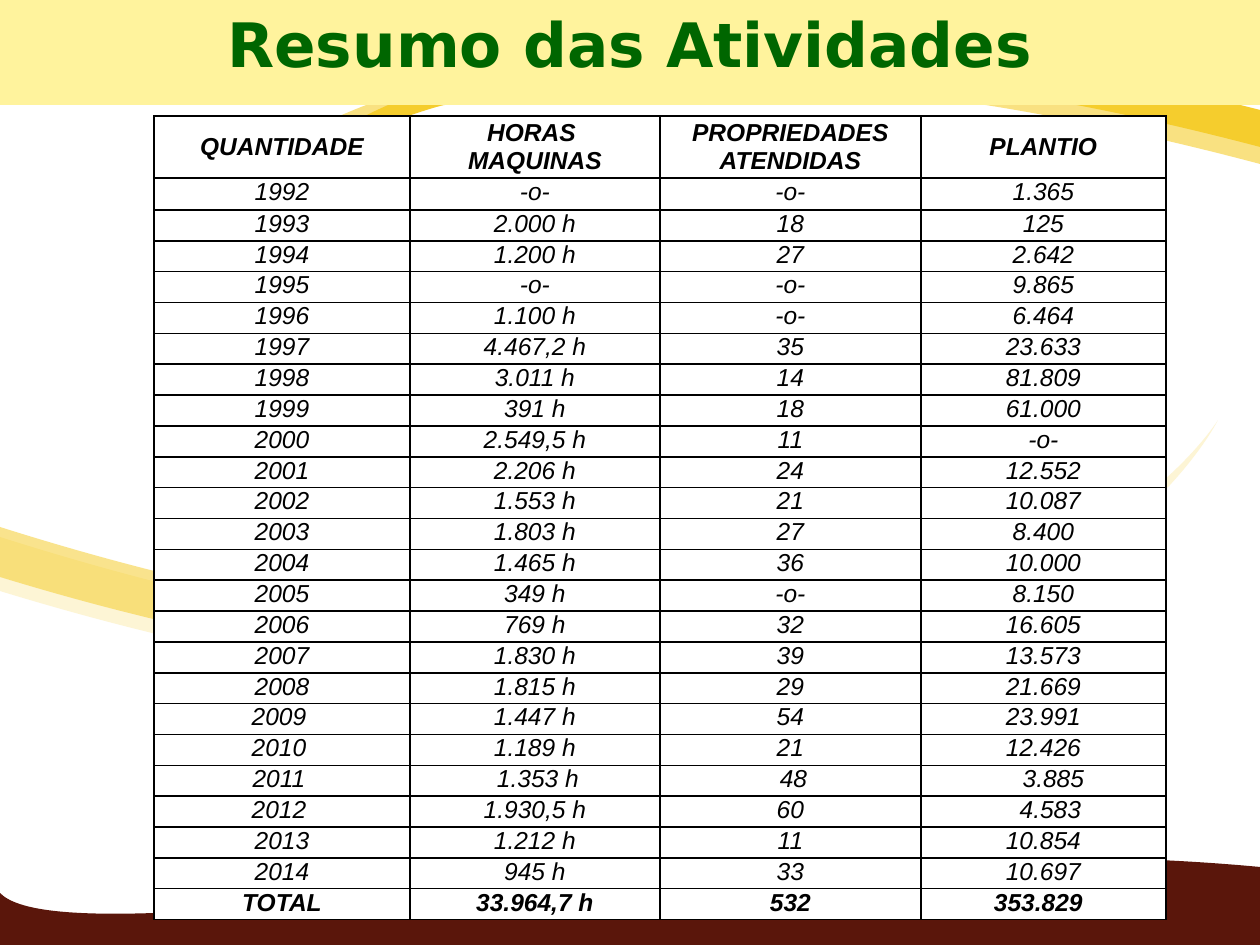
from lxml.etree import SubElement
from pptx import Presentation
from pptx.dml.color import RGBColor
from pptx.enum.shapes import MSO_SHAPE
from pptx.enum.text import MSO_ANCHOR, PP_ALIGN
from pptx.oxml import parse_xml
from pptx.oxml.ns import nsdecls, qn
from pptx.util import Emu, Pt

SCALE = 914400 / 126
BLACK = RGBColor(0x00, 0x00, 0x00)
WHITE = RGBColor(0xFF, 0xFF, 0xFF)
MAROON = RGBColor(0x5A, 0x16, 0x0B)
CREAM = RGBColor(0xFD, 0xF5, 0xD5)
PALE_GOLD = RGBColor(0xF9, 0xE1, 0x81)
GOLD = RGBColor(0xF5, 0xCD, 0x2D)
YELLOW = RGBColor(0xFF, 0xF3, 0x9D)
GREEN = RGBColor(0x00, 0x66, 0x00)

WAVES = [
    (MAROON, 100, (0, 893), [
        ((71, 966), (751, 819), (1260, 867)),
        ((1260, 893), (1261, 922), (1261, 950))], [(0, 946), (0, 893)]),
    (CREAM, 100, (0, 537), [
        ((961, 842), (1218, 420), (1218, 420)),
        ((1218, 420), (985, 892), (0, 591)),
        ((0, 591), (0, 583), (0, 537))], []),
    (PALE_GOLD, 100, (1260, 164), [
        ((389, -67), (158, 252), (158, 252)),
        ((158, 252), (368, -105), (1260, 122)),
        ((1260, 122), (1260, 129), (1260, 164))], []),
    (GOLD, 100, (1260, 147), [
        ((440, -69), (221, 231), (221, 231)),
        ((221, 231), (420, -105), (1260, 110)),
        ((1260, 110), (1260, 115), (1260, 147))], []),
    (GOLD, 54, (0, 527), [
        ((907, 814), (1148, 416), (1148, 416)),
        ((1148, 416), (929, 861), (0, 577)),
        ((0, 577), (0, 571), (0, 527))], []),
]

TITLE = "Resumo das Atividades"
HEADER = ("QUANTIDADE", "HORAS \nMAQUINAS", "PROPRIEDADES ATENDIDAS", "PLANTIO")
YEARS = [
    ("1992", "-o-", "-o-", "1.365"),
    ("1993", "2.000 h", "18", "125"),
    ("1994", "1.200 h", "27", "2.642"),
    ("1995", "-o-", "-o-", "9.865"),
    ("1996", "1.100 h", "-o-", "6.464"),
    ("1997", "4.467,2 h", "35", "23.633"),
    ("1998", "3.011 h", "14", "81.809"),
    ("1999", "391 h", "18", "61.000"),
    ("2000", "2.549,5 h", "11", "-o-"),
    ("2001", "2.206 h", "24", "12.552"),
    ("2002", "1.553 h", "21", "10.087"),
    ("2003", "1.803 h", "27", "8.400"),
    ("2004", "1.465 h", "36", "10.000"),
    ("2005", "349 h", "-o-", "8.150"),
    ("2006", "769 h", "32", "16.605"),
    ("2007", "1.830 h", "39", "13.573"),
    ("2008", "1.815 h", "29", "21.669"),
    ("2009", "1.447 h", "54", "23.991"),
    ("2010", "1.189 h", "21", "12.426"),
    ("2011", "1.353 h", "48", "3.885"),
    ("2012", "1.930,5 h", "60", "4.583"),
    ("2013", "1.212 h", "11", "10.854"),
    ("2014", "945 h", "33", "10.697"),
]
TOTAL = ("TOTAL", "33.964,7 h", "532", "353.829")
SHIFTS = {
    ("2009", 0): -3, ("2010", 0): -3, ("2011", 0): -3, ("2012", 0): -3,
    ("2011", 1): 3, ("2011", 2): 3, ("2011", 3): 10, ("2012", 3): 7,
    ("TOTAL", 3): -5,
}
TABLE_LEFT, TABLE_TOP = 154, 116
COL_WIDTHS = (256, 250, 261, 245)
HEADER_HEIGHT, FIRST_HEIGHT, REST_HEIGHT = 62, 32, 710
CELL_INSET = 5
TITLE_FONT = {"name": "DejaVu Sans", "size": Pt(35), "bold": True}
CELL_FONT = {"name": "Arial", "size": Pt(14), "italic": True}


def px(n):
    return Emu(round(n * SCALE))


def set_all(obj, values):
    for name, value in values.items():
        setattr(obj, name, value)


def set_font(p, values, color):
    p.alignment = PP_ALIGN.CENTER
    for r in p.runs:
        set_all(r.font, values)
        r.font.color.rgb = color


def paint(s, color):
    s.shadow.inherit = False
    s.fill.solid()
    s.fill.fore_color.rgb = color
    s.line.fill.background()


def add_wave(slide, color, opacity, start, curves, corners):
    points = [pt for curve in curves for pt in curve] + corners
    builder = slide.shapes.build_freeform(px(start[0]), px(start[1]))
    builder.add_line_segments([(px(x), px(y)) for x, y in points], close=True)
    s = builder.convert_to_shape()
    paint(s, color)
    segments = list(s._element.iter(qn("a:lnTo")))
    for i in range(0, 3 * len(curves), 3):
        bezier = parse_xml(f'<a:cubicBezTo {nsdecls("a")}/>')
        segments[i].addprevious(bezier)
        for segment in segments[i:i + 3]:
            bezier.append(segment[0])
            segment.getparent().remove(segment)
    if opacity < 100:
        clr = s._element.spPr.find(qn("a:solidFill"))[0]
        SubElement(clr, qn("a:alpha")).set("val", str(opacity * 1000))


def add_title(slide):
    s = slide.shapes.add_shape(MSO_SHAPE.RECTANGLE, 0, 0, px(1260), px(105))
    paint(s, YELLOW)
    tf = s.text_frame
    set_all(tf, {"word_wrap": True, "vertical_anchor": MSO_ANCHOR.TOP,
                 "margin_top": px(6), "margin_bottom": px(6)})
    tf.text = TITLE
    set_font(tf.paragraphs[0], TITLE_FONT, GREEN)


def add_borders(cell):
    tcPr = cell._tc.get_or_add_tcPr()
    for i, side in enumerate(("lnL", "lnR", "lnT", "lnB")):
        tcPr.insert(i, parse_xml(
            f'<a:{side} {nsdecls("a")} w="12700"><a:solidFill>'
            f'<a:srgbClr val="{BLACK}"/></a:solidFill></a:{side}>'))


def fill_cell(cell, text, bold, anchor, shift):
    cell.text = text
    set_all(cell, {
        "margin_left": px(CELL_INSET + 2 * max(shift, 0)),
        "margin_right": px(CELL_INSET + 2 * max(-shift, 0)),
        "margin_top": 0, "margin_bottom": 0, "vertical_anchor": anchor})
    cell.fill.solid()
    cell.fill.fore_color.rgb = WHITE
    for p in cell.text_frame.paragraphs:
        set_font(p, {**CELL_FONT, "bold": bold}, BLACK)
    add_borders(cell)


def add_summary(slide):
    rows = [HEADER, *YEARS, TOTAL]
    rest = len(rows) - 2
    heights = [HEADER_HEIGHT, FIRST_HEIGHT] + [REST_HEIGHT / rest] * rest
    table = slide.shapes.add_table(
        len(rows), len(HEADER), px(TABLE_LEFT), px(TABLE_TOP),
        px(sum(COL_WIDTHS)), px(sum(heights))).table
    set_all(table, {"first_row": False, "horz_banding": False})
    for col, width in zip(table.columns, COL_WIDTHS):
        col.width = px(width)
    for i, (row, height) in enumerate(zip(rows, heights)):
        table.rows[i].height = px(height)
        anchor = MSO_ANCHOR.MIDDLE if row is HEADER else MSO_ANCHOR.TOP
        for j, text in enumerate(row):
            fill_cell(table.cell(i, j), text, row in (HEADER, TOTAL), anchor,
                      SHIFTS.get((row[0], j), 0))


def main():
    prs = Presentation()
    prs.slide_width, prs.slide_height = px(1260), px(945)
    slide = prs.slides.add_slide(prs.slide_layouts[6])
    for wave in WAVES:
        add_wave(slide, *wave)
    add_title(slide)
    add_summary(slide)
    prs.save("out.pptx")


if __name__ == "__main__":
    main()
